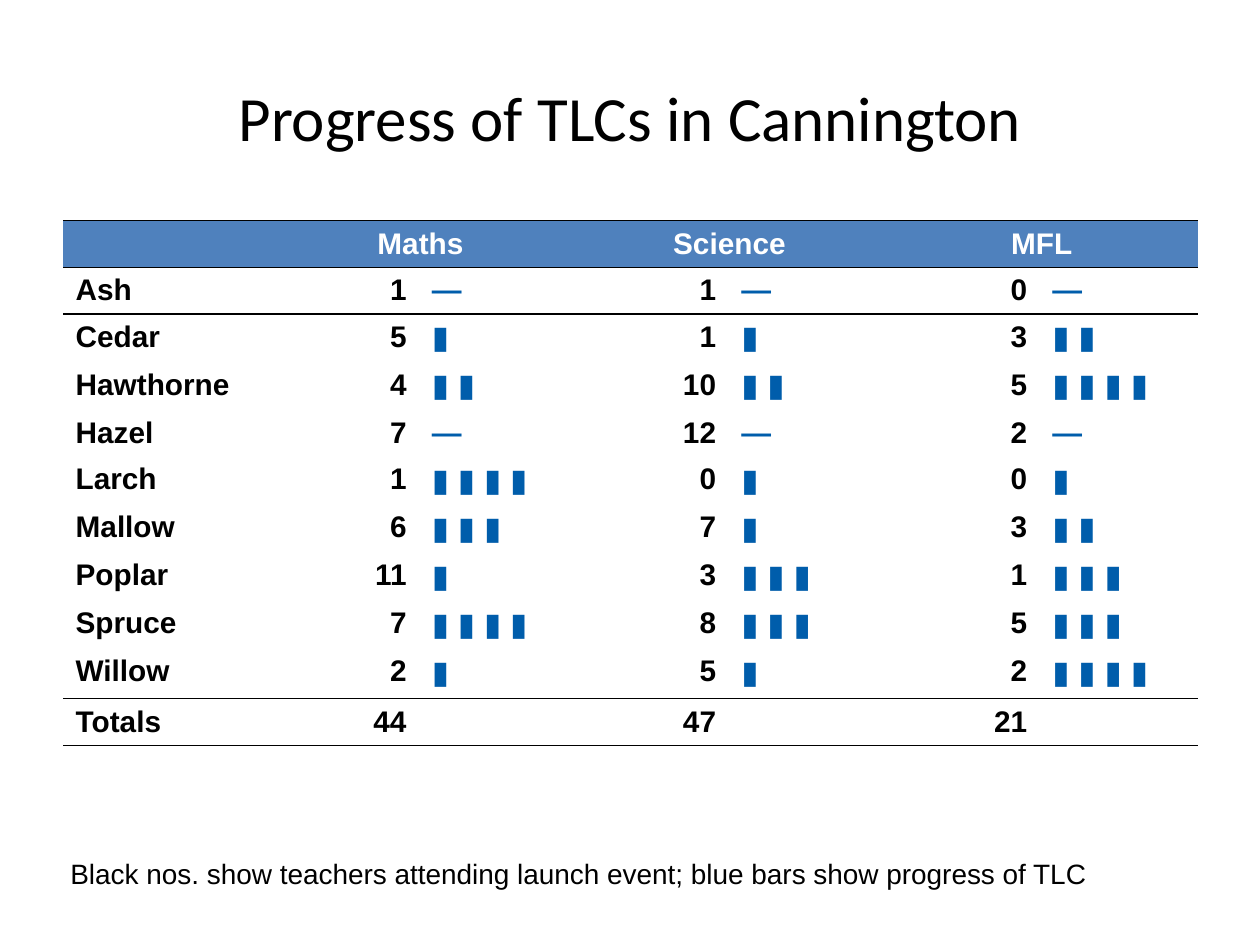
from typing import NamedTuple

from lxml import etree
from pptx import Presentation
from pptx.dml.color import RGBColor
from pptx.enum.text import MSO_ANCHOR, MSO_AUTO_SIZE, PP_ALIGN
from pptx.oxml.ns import qn
from pptx.util import Cm, Pt

LEFT, CENTER, RIGHT = PP_ALIGN.LEFT, PP_ALIGN.CENTER, PP_ALIGN.RIGHT
MIDDLE = MSO_ANCHOR.MIDDLE
FIT_SHAPE = MSO_AUTO_SIZE.SHAPE_TO_FIT_TEXT

BLACK = RGBColor(0x00, 0x00, 0x00)
WHITE = RGBColor(0xFF, 0xFF, 0xFF)
HEADER_BLUE = RGBColor(0x4F, 0x81, 0xBD)
BAR_BLUE = RGBColor(0x00, 0x5D, 0xAB)

NO_STYLE_NO_GRID = "{2D5ABB26-0587-4C30-8999-92F81FD0307C}"
COLUMN_WIDTHS = (4.11, 3.07, 3.12, 3.12, 3.15, 3.12, 3.2)
ROW_HEIGHT, LAST_SCHOOL_HEIGHT = 0.94, 1.02


class Progress(NamedTuple):
    teachers: int
    bars: int


class School(NamedTuple):
    name: str
    subjects: tuple[Progress, ...]


SUBJECTS = ("Maths", "Science", "MFL")
SCHOOLS = (
    School("Ash", (Progress(1, 0), Progress(1, 0), Progress(0, 0))),
    School("Cedar", (Progress(5, 1), Progress(1, 1), Progress(3, 2))),
    School("Hawthorne", (Progress(4, 2), Progress(10, 2), Progress(5, 4))),
    School("Hazel", (Progress(7, 0), Progress(12, 0), Progress(2, 0))),
    School("Larch", (Progress(1, 4), Progress(0, 1), Progress(0, 1))),
    School("Mallow", (Progress(6, 3), Progress(7, 1), Progress(3, 2))),
    School("Poplar", (Progress(11, 1), Progress(3, 3), Progress(1, 3))),
    School("Spruce", (Progress(7, 4), Progress(8, 3), Progress(5, 3))),
    School("Willow", (Progress(2, 1), Progress(5, 1), Progress(2, 4))),
)


def write_text(text_frame, text: str, *, size: float = 17, font: str = "Arial",
               color: RGBColor = BLACK, bold: bool = False,
               align: PP_ALIGN = LEFT, space_before: int = 0) -> None:
    """Write one paragraph; space_before is a percentage of the line."""
    paragraph = text_frame.paragraphs[0]
    paragraph.alignment = align
    spacing = etree.SubElement(paragraph._p.get_or_add_pPr(), qn("a:spcBef"))
    etree.SubElement(spacing, qn("a:spcPct"), val=str(space_before * 1000))
    run = paragraph.add_run()
    run.text = text
    run.font.size = Pt(size)
    run.font.name = font
    run.font.bold = bold
    run.font.color.rgb = color


def write_cell(cell, text: str, **text_format) -> None:
    write_text(cell.text_frame, text, bold=True, space_before=20, **text_format)


def shrink_empty_cell(cell) -> None:
    """Keep the default text size of an empty cell from stretching its row."""
    paragraph = cell.text_frame.paragraphs[0]
    etree.SubElement(paragraph._p, qn("a:endParaRPr"), sz="1200")


def add_borders(cell, sides: str) -> None:
    """Rule the given sides, T for top and B for bottom, in that order."""
    properties = cell._tc.get_or_add_tcPr()
    for side in sides:
        line = etree.SubElement(properties, qn(f"a:ln{side}"), w=str(Pt(1)))
        fill = etree.SubElement(line, qn("a:solidFill"))
        etree.SubElement(fill, qn("a:srgbClr"), val=str(BLACK))


def format_cells(table) -> None:
    last = len(table.rows) - 1
    row_borders = {0: "TB", 1: "T", last - 1: "B", last: "TB"}
    for row_index, row in enumerate(table.rows):
        for cell in row.cells:
            add_borders(cell, row_borders.get(row_index, ""))
            if row_index == 0:
                cell.fill.solid()
                cell.fill.fore_color.rgb = HEADER_BLUE
            else:
                cell.fill.background()
            if not cell.text_frame.text:
                shrink_empty_cell(cell)


def add_progress_table(slide) -> None:
    last = len(SCHOOLS) + 1
    frame = slide.shapes.add_table(
        last + 1, len(COLUMN_WIDTHS), Cm(1.27), Cm(4.45), Cm(22.86), Cm(10.42))
    table = frame.table
    table.first_row = table.horz_banding = False
    table._tbl.tblPr.find(qn("a:tableStyleId")).text = NO_STYLE_NO_GRID
    for column, width in zip(table.columns, COLUMN_WIDTHS):
        column.width = Cm(width)
    for row in table.rows:
        row.height = Cm(ROW_HEIGHT)
    table.rows[last - 1].height = Cm(LAST_SCHOOL_HEIGHT)

    for row_index, school in enumerate(SCHOOLS, start=1):
        write_cell(table.cell(row_index, 0), school.name)
        for subject_index, progress in enumerate(school.subjects):
            column = 1 + 2 * subject_index
            write_cell(table.cell(row_index, column), str(progress.teachers),
                       align=RIGHT)
            write_cell(table.cell(row_index, column + 1),
                       " ".join("▮" * progress.bars) or "—",
                       size=18 if progress.bars else 17, color=BAR_BLUE)

    write_cell(table.cell(last, 0), "Totals")
    for subject_index, subject in enumerate(SUBJECTS):
        column = 1 + 2 * subject_index
        header = table.cell(0, column)
        header.merge(table.cell(0, column + 1))
        write_cell(header, subject, color=WHITE, align=CENTER)
        total = sum(school.subjects[subject_index].teachers for school in SCHOOLS)
        write_cell(table.cell(last, column), str(total), align=RIGHT)
    format_cells(table)


def add_title(slide, text: str) -> None:
    title = slide.shapes.title
    title.left, title.top = Cm(1.27), Cm(0.76)
    title.width, title.height = Cm(22.86), Cm(3.18)
    title.text_frame.vertical_anchor = MIDDLE
    write_text(title.text_frame, text, size=36, font="Calibri", align=CENTER)


def add_key(slide, text: str) -> None:
    box = slide.shapes.add_textbox(Cm(1.17), Cm(17.15), Cm(24.23), Cm(0.94))
    box.text_frame.word_wrap = True
    box.text_frame.auto_size = FIT_SHAPE
    write_text(box.text_frame, text, size=16, space_before=50)


def main() -> None:
    presentation = Presentation()
    presentation.slide_width, presentation.slide_height = Cm(25.4), Cm(19.05)
    slide = presentation.slides.add_slide(presentation.slide_layouts[5])
    add_title(slide, "Progress of TLCs in Cannington")
    add_progress_table(slide)
    add_key(slide, "Black nos. show teachers attending launch event; "
                   "blue bars show progress of TLC")
    presentation.save("out.pptx")


if __name__ == "__main__":
    main()
